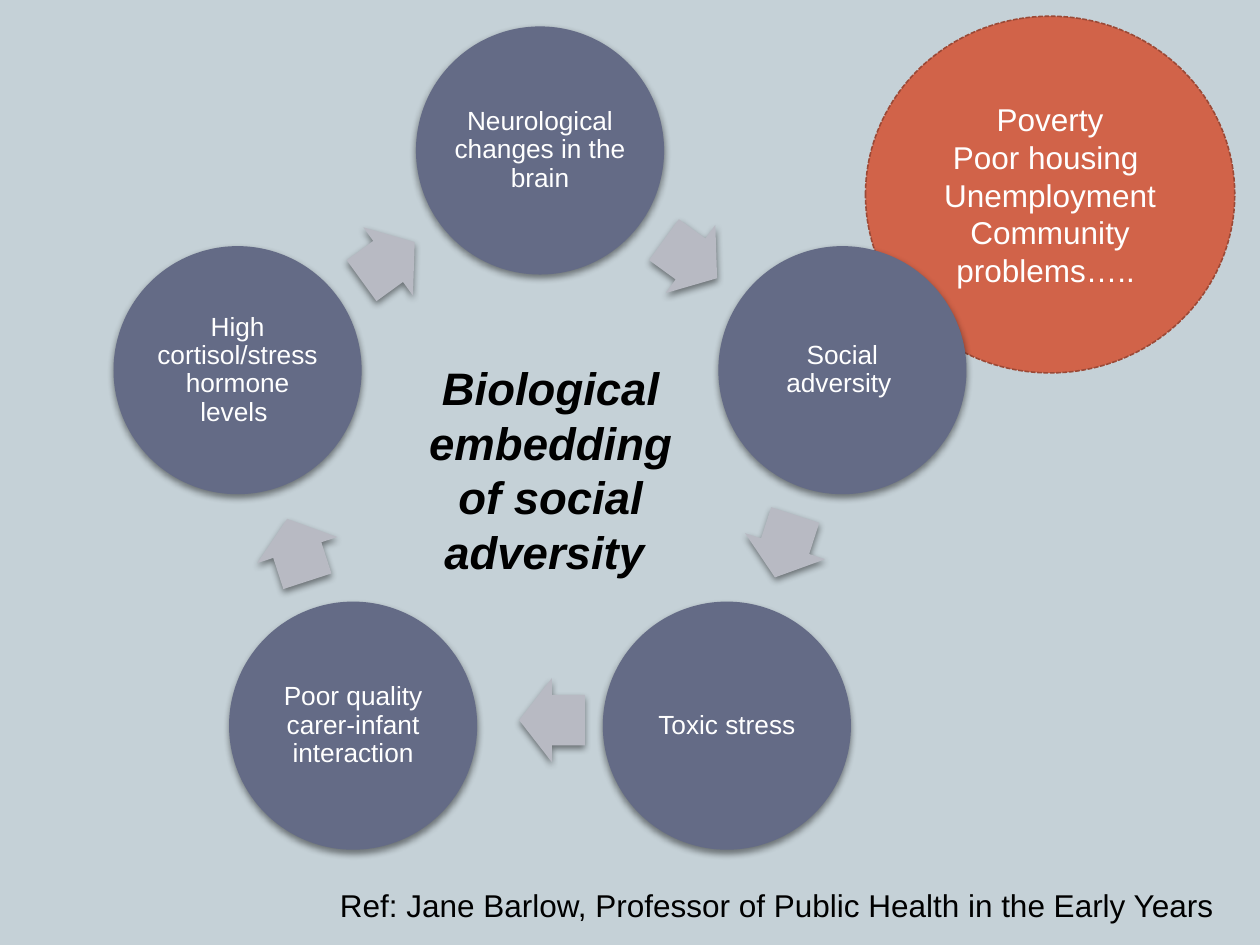
from math import cos, radians, sin

from lxml.etree import SubElement
from pptx import Presentation
from pptx.dml.color import RGBColor
from pptx.enum.dml import MSO_LINE
from pptx.enum.shapes import MSO_SHAPE
from pptx.enum.text import MSO_ANCHOR, PP_ALIGN
from pptx.oxml.ns import qn
from pptx.util import Pt

BACKGROUND = RGBColor(0xC5, 0xD1, 0xD7)
SLATE = RGBColor(0x64, 0x6B, 0x86)
ARROW_GREY = RGBColor(0xB8, 0xBA, 0xC3)
ORANGE = RGBColor(0xD1, 0x63, 0x49)
ORANGE_EDGE = RGBColor(0x9B, 0x49, 0x36)
WHITE = RGBColor(0xFF, 0xFF, 0xFF)
BLACK = RGBColor(0, 0, 0)

# Cycle geometry in points
CENTER_X, CENTER_Y, RADIUS = 308.6, 267.7, 181.7
CIRCLE_SIZE = 141.8
ARROW_WIDTH, ARROW_HEIGHT = 37.5, 48.2

# Each stage with the center of the arrow that leaves it
STAGES = [
    ("Neurological changes in the brain", (394.6, 148)),
    ("Social adversity ", (448.6, 312.1)),
    ("Toxic stress", (315.4, 411.5)),
    ("Poor quality carer-infant interaction", (169.9, 314.3)),
    ("High cortisol/stress hormone levels ", (221.8, 149.4)),
]
PRESSURES = ["Poverty", "Poor housing ", "Unemployment", "Community problems….. "]


def write_text(shape, lines, size, color, align=PP_ALIGN.CENTER):
    frame = shape.text_frame
    frame.word_wrap = True
    frame.text = "\n".join(lines)
    for paragraph in frame.paragraphs:
        paragraph.alignment = align
        paragraph.font.name = "Arial"
        paragraph.font.size = Pt(size)
        paragraph.font.color.rgb = color
    return frame


def add_soft_shadow(shape):
    effects = SubElement(shape._element.spPr, qn("a:effectLst"))
    shadow = SubElement(effects, qn("a:outerShdw"), blurRad=str(Pt(4)),
                        dist=str(Pt(2)), dir="5400000", rotWithShape="0")
    color = SubElement(shadow, qn("a:srgbClr"), val="000000")
    SubElement(color, qn("a:alpha"), val="45000")


def add_centered_shape(slide, kind, x, y, width, height, fill):
    shape = slide.shapes.add_shape(
        kind, Pt(x - width / 2), Pt(y - height / 2), Pt(width), Pt(height))
    shape.fill.solid()
    shape.fill.fore_color.rgb = fill
    shape.line.fill.background()
    add_soft_shadow(shape)
    return shape


def add_stage(slide, text, angle):
    x = CENTER_X + RADIUS * sin(radians(angle))
    y = CENTER_Y - RADIUS * cos(radians(angle))
    circle = add_centered_shape(
        slide, MSO_SHAPE.OVAL, x, y, CIRCLE_SIZE, CIRCLE_SIZE, SLATE)
    frame = write_text(circle, [text], 15, WHITE)
    frame.margin_left = frame.margin_right = Pt(1.2)
    frame.margin_top = frame.margin_bottom = Pt(1.2)
    frame.vertical_anchor = MSO_ANCHOR.MIDDLE
    frame.paragraphs[0].line_spacing = 0.9


def add_arrow(slide, center, rotation):
    arrow = add_centered_shape(
        slide, MSO_SHAPE.RIGHT_ARROW, *center, ARROW_WIDTH, ARROW_HEIGHT, ARROW_GREY)
    arrow.adjustments[0] = 0.6
    arrow.adjustments[1] = 0.5
    arrow.rotation = rotation


def add_pressures(slide):
    ellipse = slide.shapes.add_shape(
        MSO_SHAPE.OVAL, Pt(494.6), Pt(9.3), Pt(211), Pt(203.8))
    ellipse.shadow.inherit = False
    ellipse.fill.solid()
    ellipse.fill.fore_color.rgb = ORANGE
    ellipse.line.color.rgb = ORANGE_EDGE
    ellipse.line.width = Pt(0.9)
    ellipse.line.dash_style = MSO_LINE.SQUARE_DOT
    frame = write_text(ellipse, PRESSURES, 18, WHITE)
    frame.vertical_anchor = MSO_ANCHOR.MIDDLE


def set_title(slide):
    title = slide.shapes.title
    title.left, title.top = Pt(224), Pt(202.3)
    title.width, title.height = Pt(181.4), Pt(133.2)
    frame = write_text(title, ["Biological embedding of social adversity "], 26, BLACK)
    frame.vertical_anchor = MSO_ANCHOR.TOP
    font = frame.paragraphs[0].font
    font.bold = font.italic = True


def add_reference(slide):
    box = slide.shapes.add_textbox(Pt(31), Pt(502.6), Pt(674.6), Pt(29))
    write_text(box, ["Ref: Jane Barlow, Professor of Public Health in the Early Years "],
               18, BLACK, PP_ALIGN.RIGHT)


def main():
    presentation = Presentation()
    presentation.slide_width, presentation.slide_height = Pt(720), Pt(540)
    slide = presentation.slides.add_slide(presentation.slide_layouts[5])
    slide.background.fill.solid()
    slide.background.fill.fore_color.rgb = BACKGROUND

    # Outside pressures, behind the cycle
    add_pressures(slide)

    # Cycle of stages, clockwise from the top
    step = 360 / len(STAGES)
    for index, (text, arrow_center) in enumerate(STAGES):
        add_stage(slide, text, index * step)
        add_arrow(slide, arrow_center, (index + 0.5) * step)

    # Title in the middle and reference at the bottom
    set_title(slide)
    add_reference(slide)
    presentation.save("out.pptx")


if __name__ == "__main__":
    main()
